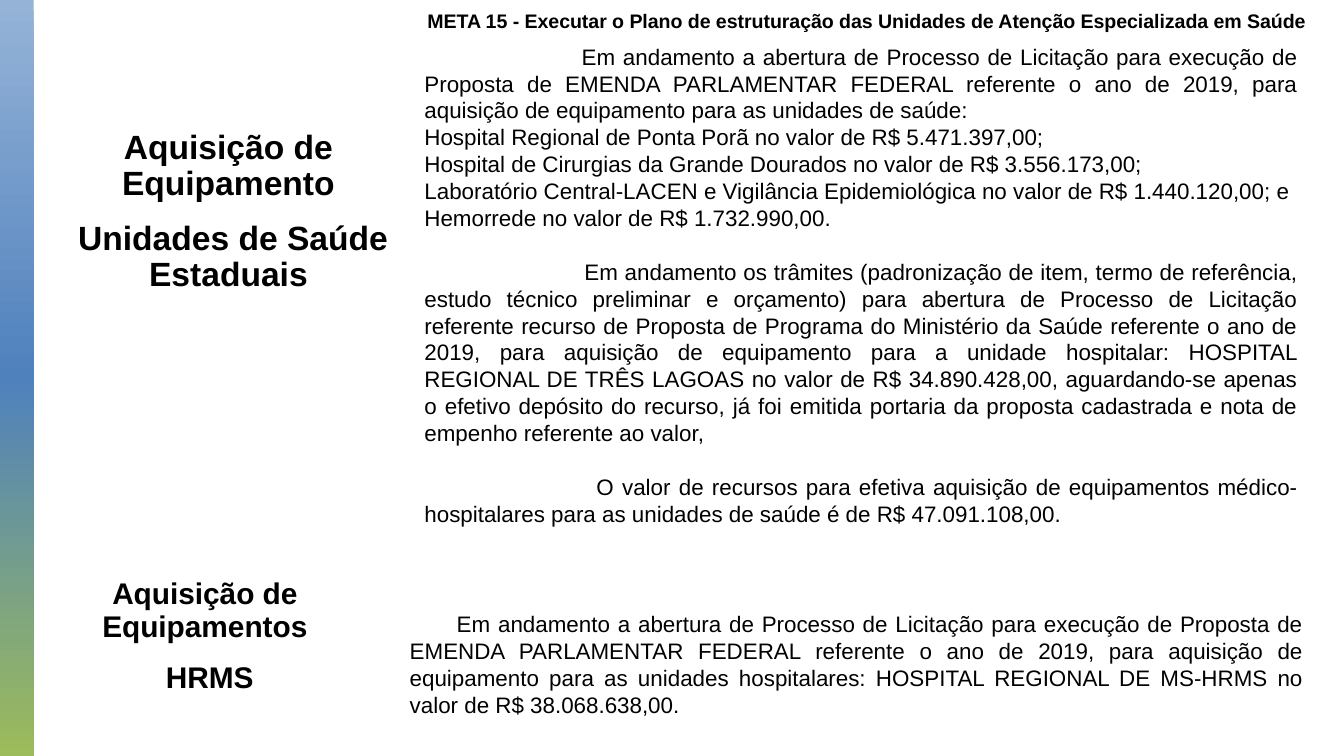
from copy import deepcopy
from dataclasses import dataclass

from pptx import Presentation
from pptx.dml.color import RGBColor
from pptx.enum import shapes, text
from pptx.util import Inches, Pt

SLIDE_WIDTH = 10
SLIDE_HEIGHT = SLIDE_WIDTH * 9 / 16
BLACK, WHITE = "000000", "FFFFFF"
BAR_COLORS = ["95B3D7", "4F81BD", "9CBB5A"]
HEADING_INSETS = (0.07, 0.04)
BODY_INSETS = (0.1, 0.05)


@dataclass
class Para:
    wording: str
    indent: float = 0  # first line, inches
    before: float = 0  # points


@dataclass
class Block:
    box: tuple[float, float, float, float]
    paras: list[Para]
    size: float


GOAL = Block((3.11, 0.03, 7.68, 0.25), [
    Para("META 15 - Executar o Plano de estruturação das Unidades de Atenção Especializada em Saúde"),
], 10.5)

HEADINGS = [
    Block((0.26, 0.93, 2.88, 1.41), [
        Para("Aquisição de Equipamento", before=10),
        Para("Unidades de Saúde Estaduais", 0.07, 10),
    ], 18),
    Block((0.28, 4.27, 2.49, 1.06), [
        Para("Aquisição de Equipamentos", before=10),
        Para("HRMS", 0.07, 10),
    ], 16),
]

BODIES = [
    Block((3.06, 0.27, 6.7, 3.74), [
        Para("Em andamento a abertura de Processo de Licitação para execução de Proposta de "
             "EMENDA PARLAMENTAR FEDERAL referente o ano de 2019, para aquisição de "
             "equipamento para as unidades de saúde:", 1.17),
        Para("Hospital Regional de Ponta Porã no valor de R$ 5.471.397,00;"),
        Para("Hospital de Cirurgias da Grande Dourados no valor de R$ 3.556.173,00;"),
        Para("Laboratório Central-LACEN e Vigilância Epidemiológica no valor de "
             "R$ 1.440.120,00; e"),
        Para("Hemorrede no valor de R$ 1.732.990,00."),
        Para("Em andamento os trâmites (padronização de item, termo de referência, estudo "
             "técnico preliminar e orçamento) para abertura de Processo de Licitação referente "
             "recurso de Proposta de Programa do Ministério da Saúde referente o ano de 2019, "
             "para aquisição de equipamento para a unidade hospitalar: HOSPITAL REGIONAL DE "
             "TRÊS LAGOAS no valor de R$ 34.890.428,00, aguardando-se apenas o efetivo depósito "
             "do recurso, já foi emitida portaria da proposta cadastrada e nota de empenho "
             "referente ao valor,", 1.19, 14.4),
        Para("O valor de recursos para efetiva aquisição de equipamentos médico-hospitalares "
             "para as unidades de saúde é de R$ 47.091.108,00.", 1.28, 14.4),
    ], 12),
    Block((2.95, 4.49, 6.85, 0.91), [
        Para("Em andamento a abertura de Processo de Licitação para execução de Proposta de "
             "EMENDA PARLAMENTAR FEDERAL referente o ano de 2019, para aquisição de "
             "equipamento para as unidades hospitalares: HOSPITAL REGIONAL DE MS-HRMS no "
             "valor de R$ 38.068.638,00.", 0.35),
    ], 12),
]


def color(hex_code: str) -> RGBColor:
    return RGBColor.from_string(hex_code)


def add_rectangle(slide, box):
    rectangle = slide.shapes.add_shape(shapes.MSO_SHAPE.RECTANGLE, *map(Inches, box))
    rectangle.shadow.inherit = False
    rectangle.line.fill.background()
    return rectangle


def write(frame, block: Block, align, insets, bold=False, spacing=None, grow=False) -> None:
    frame.word_wrap = True
    frame.margin_left = frame.margin_right = Inches(insets[0])
    frame.margin_top = frame.margin_bottom = Inches(insets[1])
    frame.vertical_anchor = text.MSO_ANCHOR.TOP
    if grow:
        frame.auto_size = text.MSO_AUTO_SIZE.SHAPE_TO_FIT_TEXT
    frame.text = "\n".join(para.wording for para in block.paras)
    for paragraph, para in zip(frame.paragraphs, block.paras):
        paragraph.alignment = align
        paragraph.space_before = Pt(para.before)
        if spacing:
            paragraph.line_spacing = spacing
        if para.indent:
            paragraph._p.get_or_add_pPr().set("indent", str(Inches(para.indent)))
        font = paragraph.runs[0].font
        font.name, font.size, font.bold = "Arial", Pt(block.size), bold
        font.color.rgb = color(BLACK)


def add_side_bar(slide) -> None:
    fill = add_rectangle(slide, (0, 0, 0.25, SLIDE_HEIGHT)).fill
    fill.gradient()
    fill.gradient_angle = 270
    # A third stop for the middle colour
    first = fill.gradient_stops[0]._gs
    first.addnext(deepcopy(first))
    for stop, position, hex_code in zip(fill.gradient_stops, (0, 0.5, 1), BAR_COLORS):
        stop.position = position
        stop.color.rgb = color(hex_code)


def add_goal(slide, block: Block) -> None:
    goal = slide.shapes.add_textbox(*map(Inches, block.box))
    write(goal.text_frame, block, text.PP_ALIGN.LEFT, HEADING_INSETS, bold=True, grow=True)
    goal.text_frame.vertical_anchor = text.MSO_ANCHOR.MIDDLE


def add_heading(slide, block: Block) -> None:
    heading = slide.shapes.add_textbox(*map(Inches, block.box))
    write(heading.text_frame, block, text.PP_ALIGN.CENTER, HEADING_INSETS, bold=True, spacing=0.9)


def add_body(slide, block: Block) -> None:
    body = add_rectangle(slide, block.box)
    body.fill.solid()
    body.fill.fore_color.rgb = color(WHITE)
    write(body.text_frame, block, text.PP_ALIGN.JUSTIFY, BODY_INSETS, grow=True)


def main() -> None:
    deck = Presentation()
    deck.slide_width, deck.slide_height = Inches(SLIDE_WIDTH), Inches(SLIDE_HEIGHT)
    slide = deck.slides.add_slide(deck.slide_layouts[6])

    add_side_bar(slide)
    add_goal(slide, GOAL)
    # Each heading stands left of its body text
    for heading, body in zip(HEADINGS, BODIES):
        add_heading(slide, heading)
        add_body(slide, body)

    deck.save("out.pptx")


if __name__ == "__main__":
    main()
